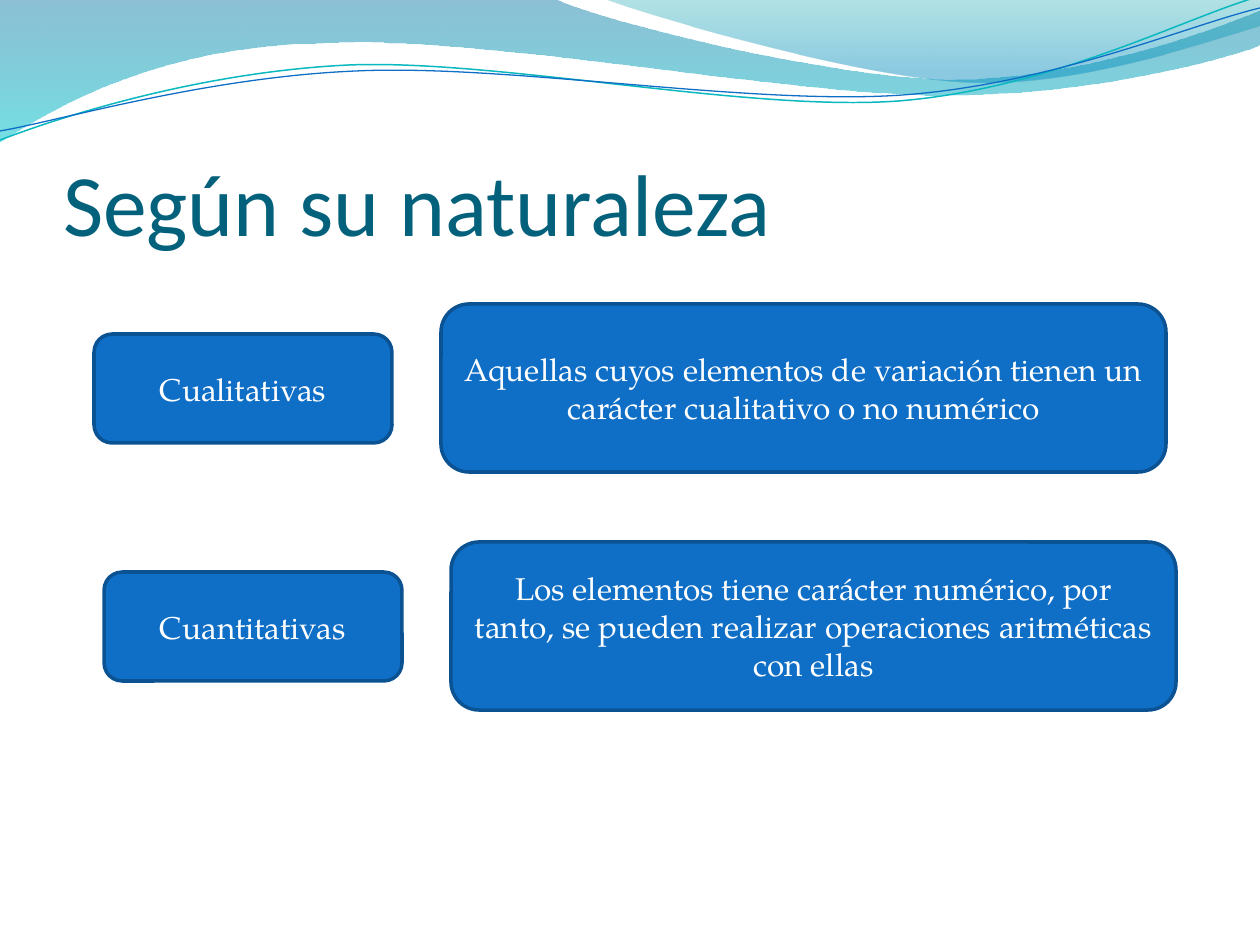
from lxml import etree
from pptx import Presentation
from pptx.dml.color import RGBColor
from pptx.enum.shapes import MSO_SHAPE
from pptx.enum.text import MSO_ANCHOR, MSO_AUTO_SIZE, PP_ALIGN
from pptx.oxml.ns import qn
from pptx.util import Pt

ROUNDED = MSO_SHAPE.ROUNDED_RECTANGLE
MIDDLE, BOTTOM = MSO_ANCHOR.MIDDLE, MSO_ANCHOR.BOTTOM
LEFT, CENTER = PP_ALIGN.LEFT, PP_ALIGN.CENTER
NO_AUTOFIT = MSO_AUTO_SIZE.NONE
TITLE_ONLY = 5

COLORS = {
    "title": "04617B", "box": "0F6FC6", "edge": "0B5292", "text": "FFFFFF",
    "teal line": "0AB8BF", "blue line": "0F6FC6",
    "band top": "0074A1", "band bottom": "00C6CF",
    "crest top": "00A1A9", "crest bottom": "008BBF",
}

# Outlines: a start point, then segments of one point (line) or three (curve)
BAND = [(-1, -1), [(555, -1)],
        [(600, 21), (837, 79), (955, 79)], [(1074, 79), (1207, 33), (1260, 11)],
        [(1261, 45)], [(1239, 55), (1096, 96), (940, 95)],
        [(784, 95), (481, 35), (324, 43)], [(163, 45), (58, 105), (-1, 142)]]
CREST = [(604, -1), [(641, 14), (859, 78), (969, 82)],
         [(1079, 87), (1211, 40), (1260, 26)], [(1260, -1)]]
TEAL_LINE = [(0, 140), [(60, 117), (199, 72), (349, 65)],
             [(498, 59), (747, 112), (898, 101)], [(1050, 89), (1182, 19), (1257, -3)]]
BLUE_LINE = [(0, 131), [(59, 121), (207, 77), (357, 71)],
             [(508, 64), (752, 106), (903, 95)], [(1053, 84), (1186, 26), (1260, 8)]]

ROWS = [
    ("Cualitativas",
     "Aquellas cuyos elementos de variación tienen un carácter cualitativo o no numérico"),
    ("Cuantitativas",
     "Los elementos tiene carácter numérico, por tanto, se pueden realizar "
     "operaciones aritméticas con ellas"),
]


def px(n):
    return round(n * 914400 / 126)


def color(name):
    return RGBColor.from_string(COLORS[name])


def add_outline(slide, outline, close):
    start, *segments = outline
    builder = slide.shapes.build_freeform(*map(px, start))
    builder.add_line_segments([(px(x), px(y)) for seg in segments for x, y in seg],
                              close=close)
    s = builder.convert_to_shape()
    s.shadow.inherit = False
    # Merge each three line steps of a curve into one cubic Bézier
    steps = iter(list(s._element.iter(qn("a:lnTo"))))
    for segment in segments:
        first, *others = [next(steps) for _ in segment]
        if others:
            first.tag = qn("a:cubicBezTo")
            for step in others:
                first.append(step[0])
                step.getparent().remove(step)
    return s


def add_wave(slide, outline, stops):
    s = add_outline(slide, outline, True)
    s.line.fill.background()
    s.fill.gradient()
    s.fill.gradient_angle = 270
    for stop, (position, name, _) in zip(s.fill.gradient_stops, stops):
        stop.position = position
        stop.color.rgb = color(name)
    for clr, (_, _, opacity) in zip(s._element.spPr.iter(qn("a:srgbClr")), stops):
        etree.SubElement(clr, qn("a:alpha"), val=str(opacity * 1000))


def add_header(slide):
    add_wave(slide, BAND, [(0, "band top", 45), (1, "band bottom", 55)])
    add_wave(slide, CREST, [(0, "crest top", 30), (0.8, "crest bottom", 45)])
    for outline, name, width in ((TEAL_LINE, "teal line", 0.85),
                                 (BLUE_LINE, "blue line", 0.75)):
        s = add_outline(slide, outline, False)
        s.fill.background()
        s.line.color.rgb = color(name)
        s.line.width = Pt(width)


def set_text(s, text, font, size, name, align, anchor):
    tf = s.text_frame
    tf.word_wrap = True
    tf.auto_size = NO_AUTOFIT
    tf.vertical_anchor = anchor
    p = tf.paragraphs[0]
    p.text = text
    p.alignment = align
    p.font.name, p.font.size = font, Pt(size)
    p.font.color.rgb = color(name)


def add_title(slide, text, left, top, width, height):
    s = slide.shapes.title
    s.left, s.top, s.width, s.height = map(px, (left, top, width, height))
    set_text(s, text, "Calibri", 50, "title", LEFT, BOTTOM)
    tf = s.text_frame
    tf.margin_left = tf.margin_right = tf.margin_bottom = 0


def add_box(slide, text, left, top, width, height):
    s = slide.shapes.add_shape(ROUNDED, *map(px, (left, top, width, height)))
    s.shadow.inherit = False
    s.fill.solid()
    s.fill.fore_color.rgb = color("box")
    s.line.color.rgb = color("edge")
    s.line.width = Pt(2)
    set_text(s, text, "TeX Gyre Pagella", 18, "text", CENTER, MIDDLE)


def add_row(slide, label, definition, left, top):
    add_box(slide, label, left, top + 30, 298, 109)
    add_box(slide, definition, left + 347, top, 725, 168)


def main():
    prs = Presentation()
    prs.slide_width, prs.slide_height = px(1260), px(945)
    slide = prs.slides.add_slide(prs.slide_layouts[TITLE_ONLY])
    add_header(slide)
    add_title(slide, "Según su naturaleza", 63, 97, 1144, 157)
    # Each row is stepped down and slightly to the right
    for i, (label, definition) in enumerate(ROWS):
        add_row(slide, label, definition, 94 + 10 * i, 304 + 238 * i)
    prs.save("out.pptx")


if __name__ == "__main__":
    main()
